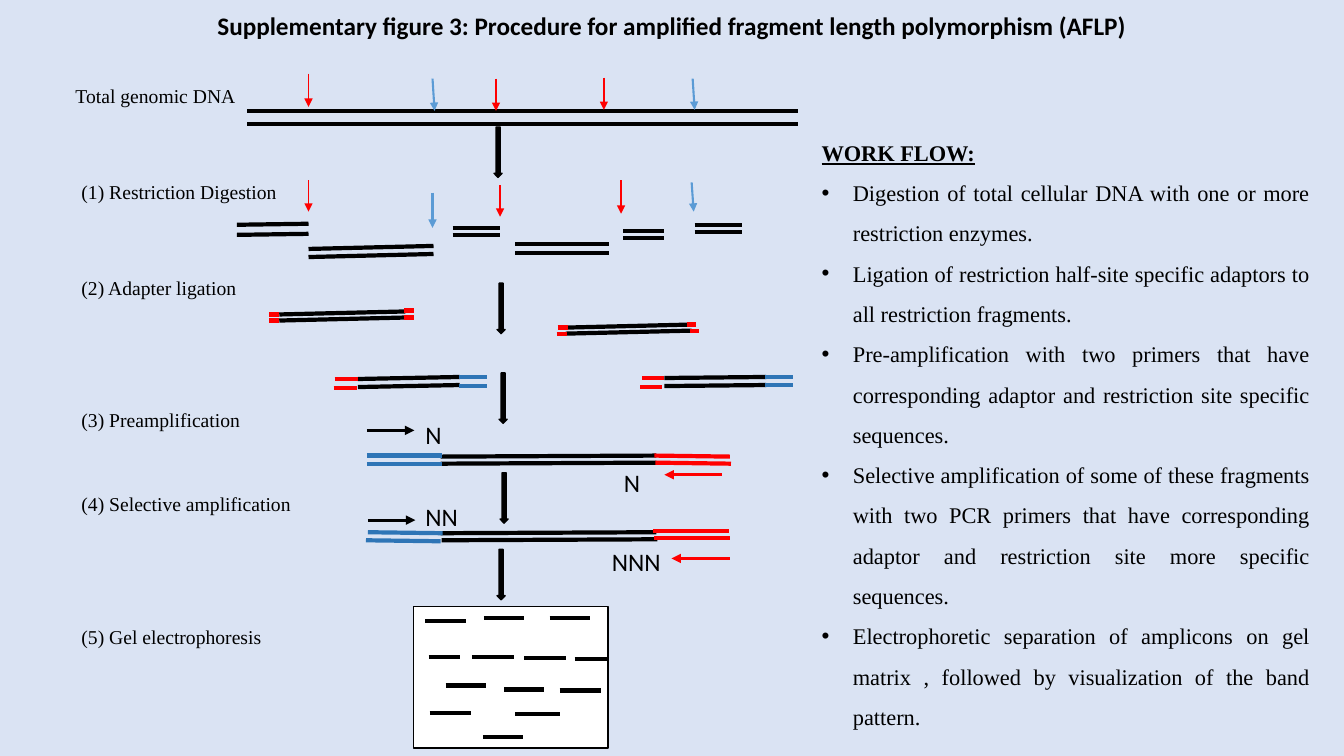
import dataclasses

import pptx
import pptx.dml.color
import pptx.enum.shapes
import pptx.enum.text
import pptx.oxml
import pptx.oxml.ns
import pptx.util

ALIGN = pptx.enum.text.PP_ALIGN
SHAPE = pptx.enum.shapes.MSO_SHAPE


@dataclasses.dataclass(frozen=True)
class Theme:
    back: str = "DAE3F3"
    black: str = "000000"
    white: str = "FFFFFF"
    red: str = "FF0000"
    blue: str = "2E75B6"
    sky: str = "5B9BD5"
    sans: str = "Calibri"
    serif: str = "Times New Roman"
    title: int = 18
    base: int = 18
    flow: int = 16
    label: int = 14
    strand: float = 3
    primer: float = 2.25
    site: float = 1.5
    edge: float = 1


THEME = Theme()

# colour, left, top at left, right, top at right, gap, shift of lower line
STRANDS = [
    (THEME.black, 2.45, 1.1, 7.91, 1.1, .13, 0),
    (THEME.black, 2.35, 2.23, 3.06, 2.22, .1, 0),
    (THEME.black, 3.06, 2.47, 4.3, 2.44, .08, 0),
    (THEME.black, 4.49, 2.26, 4.96, 2.26, .07, 0),
    (THEME.black, 5.11, 2.42, 6.04, 2.42, .09, 0),
    (THEME.black, 6.18, 2.29, 6.59, 2.29, .07, 0),
    (THEME.black, 6.89, 2.23, 7.36, 2.23, .07, 0),
    (THEME.black, 2.77, 3.12, 4.02, 3.09, .06, 0),
    (THEME.black, 5.61, 3.25, 6.86, 3.22, .06, 0),
    (THEME.black, 3.55, 3.76, 4.56, 3.74, .08, 0),
    (THEME.black, 6.59, 3.75, 7.6, 3.74, .08, 0),
    (THEME.black, 4.37, 4.53, 6.51, 4.52, .07, 0),
    (THEME.black, 4.37, 5.29, 6.51, 5.28, .07, .01),
    (THEME.red, 2.67, 3.12, 2.77, 3.12, .06, 0),
    (THEME.red, 4.01, 3.08, 4.11, 3.08, .07, 0),
    (THEME.red, 5.53, 3.25, 5.63, 3.25, .06, -.01),
    (THEME.red, 6.81, 3.22, 6.9, 3.22, .06, .03),
    (THEME.red, 3.32, 3.76, 3.55, 3.76, .09, -.01),
    (THEME.red, 6.37, 3.75, 6.59, 3.75, .09, -.02),
    (THEME.red, 6.49, 4.52, 7.24, 4.53, .07, .01),
    (THEME.red, 6.48, 5.27, 7.23, 5.27, .07, .01),
    (THEME.blue, 4.55, 3.74, 4.83, 3.74, .09, 0),
    (THEME.blue, 7.59, 3.74, 7.87, 3.74, .08, 0),
    (THEME.blue, 3.64, 4.52, 4.38, 4.52, .08, 0),
    (THEME.blue, 3.65, 5.28, 4.39, 5.29, .08, -.02),
]
# colour, width, start, end
ARROWS = [
    (THEME.red, THEME.edge, 3.06, .73, 3.06, 1.06),
    (THEME.sky, THEME.site, 4.29, .78, 4.31, 1.1),
    (THEME.red, THEME.site, 4.92, .78, 4.92, 1.1),
    (THEME.red, THEME.site, 5.99, .77, 5.99, 1.09),
    (THEME.sky, THEME.site, 6.87, .78, 6.89, 1.09),
    (THEME.red, THEME.edge, 3.06, 1.79, 3.06, 2.1),
    (THEME.sky, THEME.site, 4.29, 1.91, 4.29, 2.26),
    (THEME.red, THEME.site, 4.96, 1.84, 4.96, 2.15),
    (THEME.red, THEME.site, 6.16, 1.79, 6.16, 2.12),
    (THEME.sky, THEME.site, 6.86, 1.81, 6.88, 2.1),
    (THEME.black, THEME.primer, 3.64, 4.27, 4.11, 4.27),
    (THEME.black, THEME.primer, 3.65, 5.16, 4.12, 5.16),
    (THEME.red, THEME.primer, 7.16, 4.71, 6.59, 4.71),
    (THEME.red, THEME.primer, 7.24, 5.54, 6.66, 5.54),
]
# left, top, length
BANDS = [
    (4.22, 6.16, .4), (4.8, 6.13, .4), (5.45, 6.13, .4),
    (4.25, 6.52, .31), (4.68, 6.52, .42), (5.2, 6.53, .41), (5.7, 6.54, .33),
    (4.42, 6.8, .4), (5, 6.84, .4), (5.55, 6.85, .41),
    (4.26, 7.07, .41), (5.11, 7.08, .44), (4.79, 7.31, .4),
]
STEPS = [(4.9, 1.26), (4.93, 2.81), (4.95, 3.7), (4.96, 4.69), (4.93, 5.45)]
LABELS = [
    ("Total genomic DNA", .65, .78),
    ("(1) Restriction Digestion", .71, 1.74),
    ("(2) Adapter ligation", .71, 2.69),
    ("(3) Preamplification", .71, 4),
    ("(4) Selective amplification", .71, 4.83),
    ("(5) Gel electrophoresis", .71, 6.15),
]
BASES = [("N", 4.12, 4.11), ("NN", 4.12, 4.92), ("N", 6.09, 4.59), ("NNN", 5.97, 5.37)]
FLOW = [
    "Digestion of total cellular DNA with one or more restriction enzymes.",
    "Ligation of restriction half-site specific adaptors to all restriction fragments.",
    "Pre-amplification with two primers that have corresponding adaptor and "
    "restriction site specific sequences.",
    "Selective amplification of some of these fragments with two PCR primers that have "
    "corresponding adaptor and restriction site more specific sequences.",
    "Electrophoretic separation of amplicons on gel matrix , followed by visualization "
    "of the band pattern.",
]


def size(*inches):
    """Turn inches into lengths."""
    return [pptx.util.Cm(2.54 * inch) for inch in inches]


def tint(code):
    return pptx.dml.color.RGBColor.from_string(code)


def add_xml(parent, tag, **attrs):
    node = pptx.oxml.parse_xml(f"<a:{tag} {pptx.oxml.ns.nsdecls('a')}/>")
    for name, value in attrs.items():
        node.set(name, value)
    parent.append(node)


def write(para, text, face=THEME.serif, points=THEME.label, bold=False,
          under=False, align=ALIGN.LEFT, space=1.0, bullet=False):
    """Fill one paragraph and set its format."""
    para.alignment = align
    para.line_spacing = space
    if bullet:
        props = para._p.get_or_add_pPr()
        hang = pptx.util.Cm(.79)
        props.set("marL", str(hang))
        props.set("indent", str(-hang))
        add_xml(props, "buFont", typeface="Arial")
        add_xml(props, "buChar", char="•")
    run = para.add_run()
    run.text = text
    font = run.font
    font.name, font.size = face, pptx.util.Pt(points)
    font.bold, font.underline = bold, under
    font.color.rgb = tint(THEME.black)


def add_box(slide, left, top, width, height):
    frame = slide.shapes.add_textbox(*size(left, top, width, height)).text_frame
    frame.word_wrap = True
    return frame


def add_line(slide, color, width, x1, y1, x2, y2, arrow=False):
    link = slide.shapes.add_connector(
        pptx.enum.shapes.MSO_CONNECTOR.STRAIGHT, *size(x1, y1, x2, y2))
    link.line.color.rgb = tint(color)
    link.line.width = pptx.util.Pt(width)
    if arrow:
        add_xml(link.line._get_or_add_ln(), "tailEnd", type="triangle")
    add_xml(link._element.spPr, "effectLst")


def add_strand(slide, color, x1, y1, x2, y2, gap, shift):
    """Draw the two lines of a DNA piece."""
    for dx, dy in ((0, 0), (shift, gap)):
        add_line(slide, color, THEME.strand, x1 + dx, y1 + dy, x2 + dx, y2 + dy)


def add_form(slide, kind, fill, left, top, width, height):
    form = slide.shapes.add_shape(kind, *size(left, top, width, height))
    form.shadow.inherit = False
    form.fill.solid()
    form.fill.fore_color.rgb = tint(fill)
    form.line.color.rgb = tint(THEME.black)
    form.line.width = pptx.util.Pt(THEME.edge)


def add_title(slide, text):
    title = slide.shapes.title
    title.left, title.top, title.width, title.height = size(0, .05, 13.33, .4)
    frame = title.text_frame
    frame.word_wrap = True
    frame.auto_size = pptx.enum.text.MSO_AUTO_SIZE.NONE
    frame.vertical_anchor = pptx.enum.text.MSO_ANCHOR.TOP
    write(frame.paragraphs[0], text, face=THEME.sans, points=THEME.title,
          bold=True, align=ALIGN.CENTER)


def add_flow(slide):
    frame = add_box(slide, 8.05, 1.33, 5.04, 5.98)
    write(frame.paragraphs[0], "WORK FLOW:", points=THEME.flow, bold=True,
          under=True, align=ALIGN.JUSTIFY)
    for text in FLOW:
        write(frame.add_paragraph(), text, points=THEME.flow,
              align=ALIGN.JUSTIFY, space=1.5, bullet=True)


def main():
    deck = pptx.Presentation()
    deck.slide_width, deck.slide_height = size(13.33, 7.5)
    slide = deck.slides.add_slide(deck.slide_layouts[5])
    slide.background.fill.solid()
    slide.background.fill.fore_color.rgb = tint(THEME.back)
    add_title(slide, "Supplementary figure 3: Procedure for amplified fragment "
                     "length polymorphism (AFLP)")
    for strand in STRANDS:
        add_strand(slide, *strand)
    for arrow in ARROWS:
        add_line(slide, *arrow, arrow=True)
    add_form(slide, SHAPE.RECTANGLE, THEME.white, 4.1, 6.02, 1.93, 1.4)
    for left, top, length in BANDS:
        add_line(slide, THEME.black, THEME.strand, left, top, left + length, top)
    for left, top in STEPS:
        add_form(slide, SHAPE.DOWN_ARROW, THEME.black, left, top, .08, .5)
    for text, left, top in LABELS:
        write(add_box(slide, left, top, 2.8, .34).paragraphs[0], text)
    for text, left, top in BASES:
        write(add_box(slide, left, top, .87, .39).paragraphs[0], text,
              face=THEME.sans, points=THEME.base)
    add_flow(slide)
    deck.save("out.pptx")


if __name__ == "__main__":
    main()
